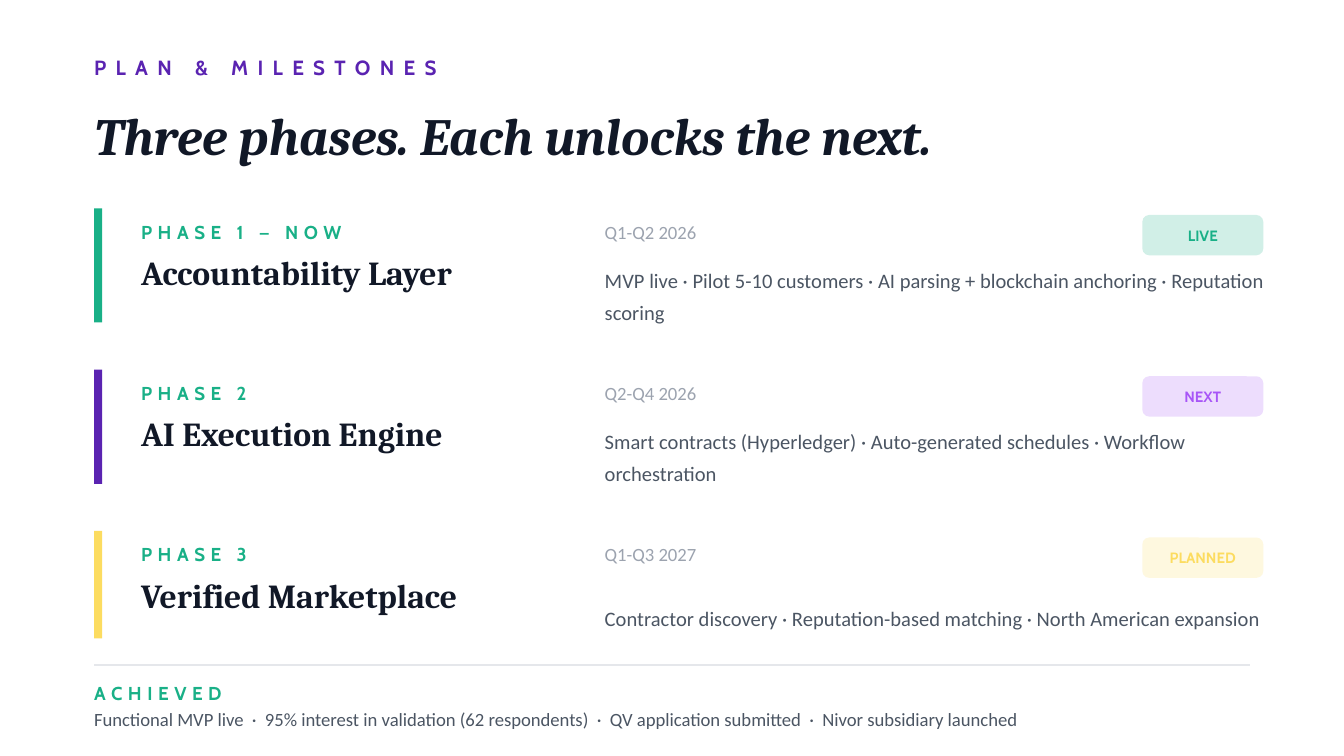
from dataclasses import dataclass

from lxml import etree
from pptx import Presentation
from pptx.dml.color import RGBColor
from pptx.enum.shapes import MSO_CONNECTOR, MSO_SHAPE
from pptx.enum.text import MSO_ANCHOR, PP_ALIGN
from pptx.oxml.ns import qn
from pptx.util import Inches, Pt

RECTANGLE = MSO_SHAPE.RECTANGLE
ROUNDED = MSO_SHAPE.ROUNDED_RECTANGLE
STRAIGHT = MSO_CONNECTOR.STRAIGHT
MIDDLE = MSO_ANCHOR.MIDDLE
CENTER = PP_ALIGN.CENTER

GREEN, PURPLE, VIOLET, YELLOW = "19B087", "5A23B1", "A855F7", "FCDC60"
INK, BODY, MUTED, RULE = "111827", "4B5563", "9CA3AF", "E5E7EB"

PAGE_WIDTH = Inches(10)
PAGE_HEIGHT = PAGE_WIDTH * 9 // 16
LEFT, NAME_LEFT, DETAIL_LEFT, BADGE_LEFT = 0.7, 1.05, 4.5, 8.5
FIRST_TOP, PHASE_STEP = 1.55, 1.2


@dataclass(frozen=True)
class Style:
    font: str
    size: float
    color: str
    bold: bool = False
    italic: bool = False
    tracking: float = 0


@dataclass(frozen=True)
class Phase:
    label: str
    name: str
    period: str
    detail: str
    status: str
    bar_color: str
    badge_color: str
    bar_height: float = 0.85


EYEBROW = Style("Cabin", 11, PURPLE, bold=True, tracking=5)
TITLE = Style("Cambria", 28, INK, bold=True, italic=True)
LABEL = Style("Cabin", 10, GREEN, bold=True, tracking=3)
NAME = Style("Cambria", 18, INK, bold=True)
PERIOD = Style("Calibri", 10, MUTED)
DETAIL = Style("Calibri", 11, BODY)
FOOTER = Style("Calibri", 10, BODY)
WIDE_SPACE = Style("Calibri", 10, BODY, tracking=2.25)

PHASES = [
    Phase("PHASE 1 — NOW", "Accountability Layer", "Q1-Q2 2026",
          "MVP live · Pilot 5-10 customers · AI parsing + blockchain anchoring"
          " · Reputation scoring", "LIVE", GREEN, GREEN),
    Phase("PHASE 2", "AI Execution Engine", "Q2-Q4 2026",
          "Smart contracts (Hyperledger) · Auto-generated schedules"
          " · Workflow orchestration", "NEXT", PURPLE, VIOLET),
    Phase("PHASE 3", "Verified Marketplace", "Q1-Q3 2027",
          "Contractor discovery · Reputation-based matching"
          " · North American expansion", "PLANNED", YELLOW, YELLOW, 0.8),
]
ACHIEVEMENTS = [
    "Functional MVP live",
    "95% interest in validation (62 respondents)",
    "QV application submitted",
    "Nivor subsidiary launched",
]


def rgb(color: str) -> RGBColor:
    return RGBColor.from_string(color)


def add_span(para, text: str, style: Style) -> None:
    span = para.add_run()
    span.text = text
    font = span.font
    font.name, font.size = style.font, Pt(style.size)
    font.bold, font.italic = style.bold, style.italic
    font.color.rgb = rgb(style.color)
    if style.tracking:
        span._r.get_or_add_rPr().set("spc", str(int(style.tracking * 100)))


def prepare_frame(box):
    """Remove the insets, centre vertically and return the first paragraph."""
    frame = box.text_frame
    frame.word_wrap = True
    frame.vertical_anchor = MIDDLE
    frame.margin_left = frame.margin_right = 0
    frame.margin_top = frame.margin_bottom = 0
    return frame.paragraphs[0]


def add_text(page, left: float, top: float, width: float, height: float,
             *spans: tuple[str, Style]):
    box = page.shapes.add_textbox(
        Inches(left), Inches(top), Inches(width), Inches(height))
    para = prepare_frame(box)
    for text, style in spans:
        add_span(para, text, style)
    return para


def add_block(page, kind, left: float, top: float, width: float,
              height: float, color: str):
    block = page.shapes.add_shape(
        kind, Inches(left), Inches(top), Inches(width), Inches(height))
    block.shadow.inherit = False
    block.fill.solid()
    block.fill.fore_color.rgb = rgb(color)
    block.line.fill.background()
    return block


def add_badge(page, top: float, text: str, color: str) -> None:
    area = (BADGE_LEFT, top, 0.9, 0.3)
    badge = add_block(page, ROUNDED, *area, color)
    badge.adjustments[0] = 0.17
    tint = badge._element.spPr.find(qn("a:solidFill")).find(qn("a:srgbClr"))
    etree.SubElement(tint, qn("a:alpha")).set("val", "20000")
    para = add_text(page, *area, (text, Style("Cabin", 8, color, bold=True)))
    para.alignment = CENTER


def add_phase(page, top: float, phase: Phase) -> None:
    add_block(page, RECTANGLE, LEFT, top, 0.06, phase.bar_height,
              phase.bar_color)
    add_text(page, NAME_LEFT, top + 0.05, 2.5, 0.25, (phase.label, LABEL))
    add_text(page, NAME_LEFT, top + 0.3, 4, 0.35, (phase.name, NAME))
    add_text(page, DETAIL_LEFT, top + 0.05, 1.5, 0.25, (phase.period, PERIOD))
    add_badge(page, top + 0.05, phase.status, phase.badge_color)
    detail = add_text(page, DETAIL_LEFT, top + 0.4, 5, 0.45,
                      (phase.detail, DETAIL))
    detail.line_spacing = 1.3


def add_rule(page, top: float) -> None:
    rule = page.shapes.add_connector(
        STRAIGHT, Inches(LEFT), Inches(top), Inches(9.3), Inches(top))
    rule.line.color.rgb = rgb(RULE)
    rule.line.width = Pt(1)
    etree.SubElement(rule._element.spPr, qn("a:effectLst"))


def add_footer(page) -> None:
    add_rule(page, 4.95)
    add_text(page, LEFT, 5.03, 2, 0.25, ("ACHIEVED", LABEL))
    separator = [(" ", WIDE_SPACE), ("·", FOOTER), (" ", WIDE_SPACE)]
    spans = []
    for achievement in ACHIEVEMENTS:
        if spans:
            spans += separator
        spans.append((achievement, FOOTER))
    add_text(page, LEFT, 5.2, 8.6, 0.3, *spans)


def main() -> None:
    deck = Presentation()
    deck.slide_width, deck.slide_height = PAGE_WIDTH, PAGE_HEIGHT
    page = deck.slides.add_slide(deck.slide_layouts[6])
    page.background.fill.solid()
    page.background.fill.fore_color.rgb = rgb("FFFFFF")

    add_text(page, LEFT, 0.35, 5, 0.3, ("PLAN & MILESTONES", EYEBROW))
    add_text(page, LEFT, 0.7, 9, 0.6,
             ("Three phases. Each unlocks the next.", TITLE))
    for index, phase in enumerate(PHASES):
        add_phase(page, FIRST_TOP + index * PHASE_STEP, phase)
    add_footer(page)
    deck.save("out.pptx")


if __name__ == "__main__":
    main()
